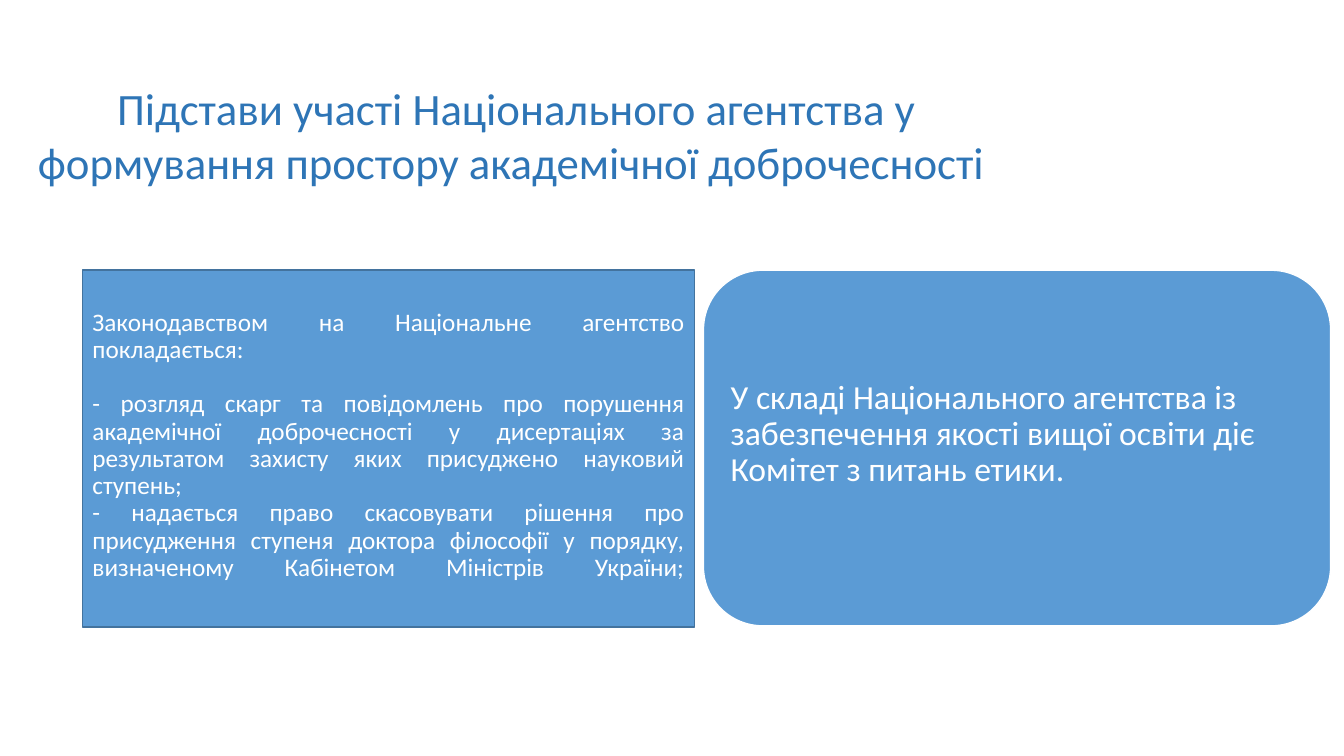
from dataclasses import dataclass

from pptx import Presentation
from pptx.dml.color import RGBColor
from pptx.enum.shapes import MSO_SHAPE as Preset
from pptx.enum.text import MSO_ANCHOR as Anchor, PP_ALIGN as Align
from pptx.util import Pt


@dataclass(frozen=True)
class Theme:
    font: str = "Calibri"
    title_size: int = 32
    statement_size: int = 24
    duties_size: int = 18
    title: RGBColor = RGBColor(0x2E, 0x75, 0xB6)
    panel: RGBColor = RGBColor(0x5B, 0x9B, 0xD5)
    border: RGBColor = RGBColor(0x43, 0x73, 0x9E)
    white: RGBColor = RGBColor(0xFF, 0xFF, 0xFF)


THEME = Theme()

TITLE = "Підстави участі Національного агентства у формування простору академічної доброчесності "
# The closing line break keeps the last line justified to full width
DUTIES = [
    "Законодавством на Національне агентство покладається:",
    "- розгляд скарг та повідомлень про порушення академічної доброчесності "
    "у дисертаціях за результатом захисту яких присуджено науковий ступень;",
    "- надається право скасовувати рішення про присудження ступеня доктора "
    "філософії у порядку, визначеному Кабінетом Міністрів України;\v",
]
STATEMENT = "У складі Національного агентства із забезпечення якості вищої освіти діє Комітет з питань етики."


def write_text(shape, texts, size, color, align, anchor, line_spacing=0.9):
    frame = shape.text_frame
    frame.word_wrap = True
    frame.vertical_anchor = anchor
    for index, text in enumerate(texts):
        paragraph = frame.paragraphs[0] if index == 0 else frame.add_paragraph()
        paragraph.text = text
        paragraph.alignment = align
        paragraph.line_spacing = line_spacing
        paragraph.font.name = THEME.font
        paragraph.font.size = Pt(size)
        paragraph.font.color.rgb = color
    return frame


def add_panel(slide, preset, left, top, width, height, border):
    shape = slide.shapes.add_shape(preset, Pt(left), Pt(top), Pt(width), Pt(height))
    shape.shadow.inherit = False
    shape.fill.solid()
    shape.fill.fore_color.rgb = THEME.panel
    shape.line.color.rgb = border
    shape.line.width = Pt(1)
    return shape


def add_title(slide):
    box = slide.shapes.add_textbox(Pt(0), Pt(54), Pt(738), Pt(85))
    write_text(box, [TITLE], THEME.title_size, THEME.title, Align.CENTER, Anchor.TOP, 1.0)


def add_duties(slide):
    panel = add_panel(slide, Preset.RECTANGLE, 59, 193, 437, 255, THEME.border)
    frame = write_text(panel, DUTIES, THEME.duties_size, THEME.white, Align.JUSTIFY, Anchor.TOP)
    frame.margin_top = Pt(28)
    frame.paragraphs[0].space_after = Pt(19.5)


def add_statement(slide):
    panel = add_panel(slide, Preset.ROUNDED_RECTANGLE, 502.5, 193, 448, 254, THEME.white)
    frame = write_text(panel, [STATEMENT], THEME.statement_size, THEME.white, Align.LEFT, Anchor.MIDDLE)
    frame.margin_bottom = Pt(23)


def main():
    presentation = Presentation()
    presentation.slide_width, presentation.slide_height = Pt(960), Pt(540)
    slide = presentation.slides.add_slide(presentation.slide_layouts[6])

    # Heading above two side-by-side panels
    add_duties(slide)
    add_statement(slide)
    add_title(slide)

    presentation.save("out.pptx")


if __name__ == "__main__":
    main()
